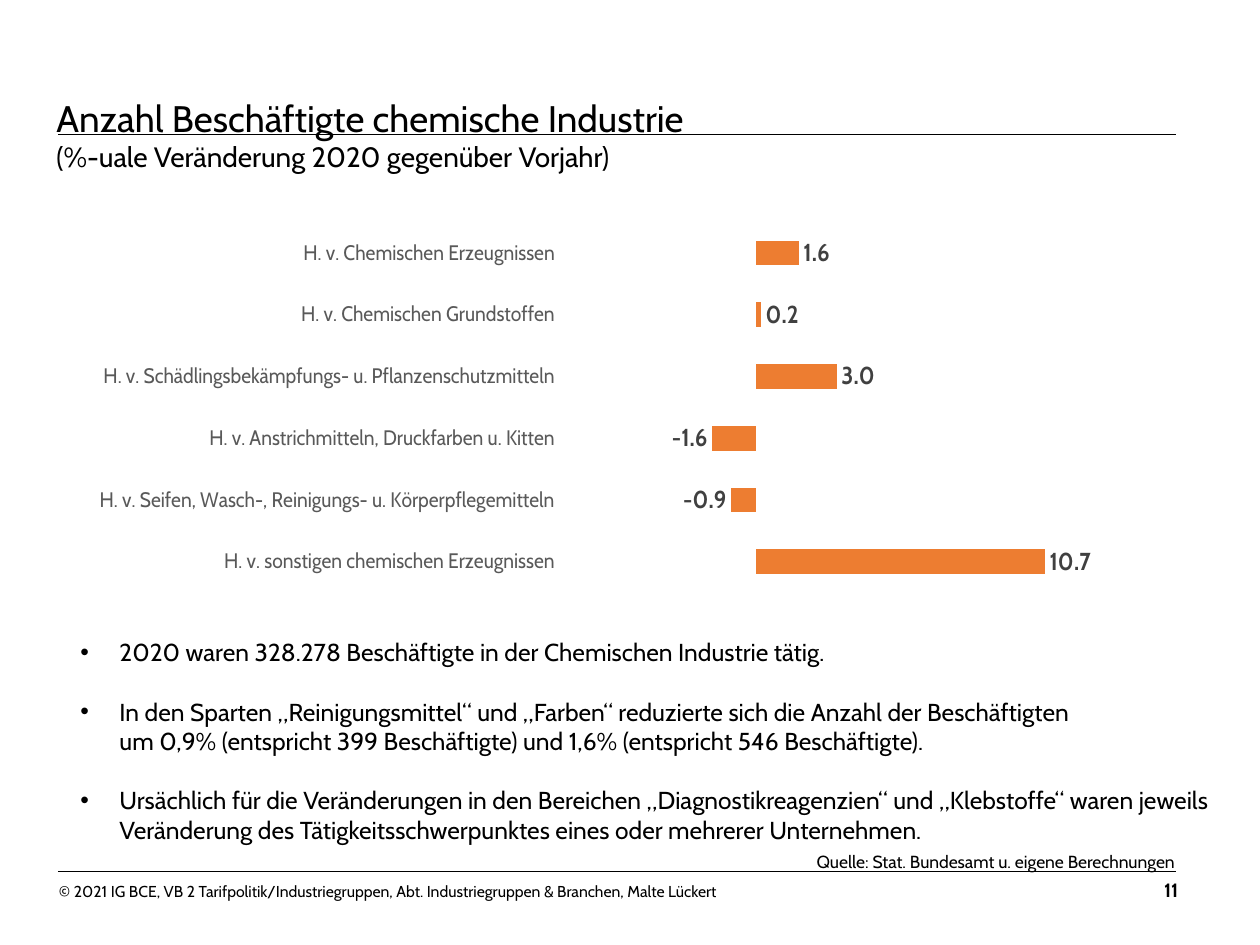
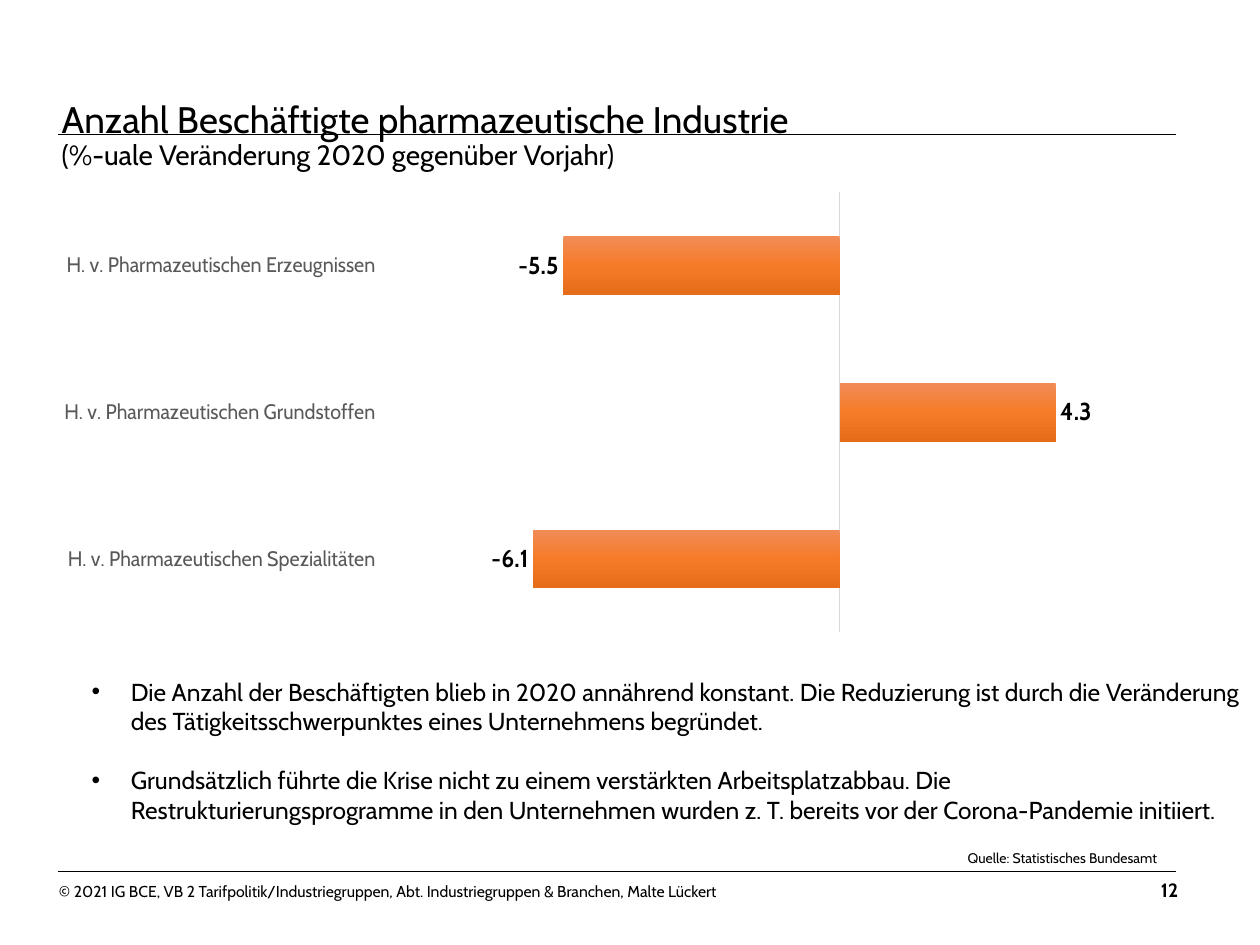
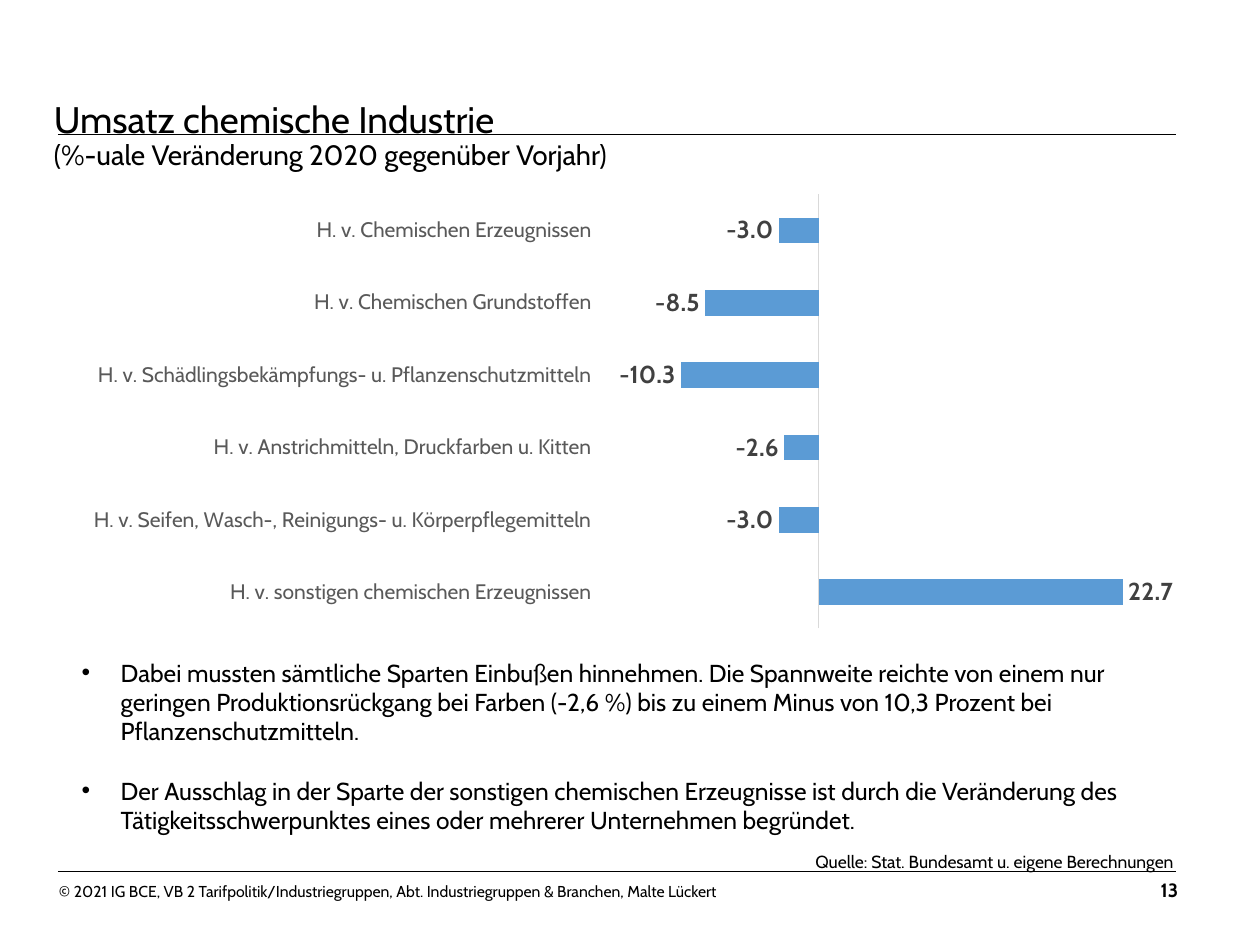
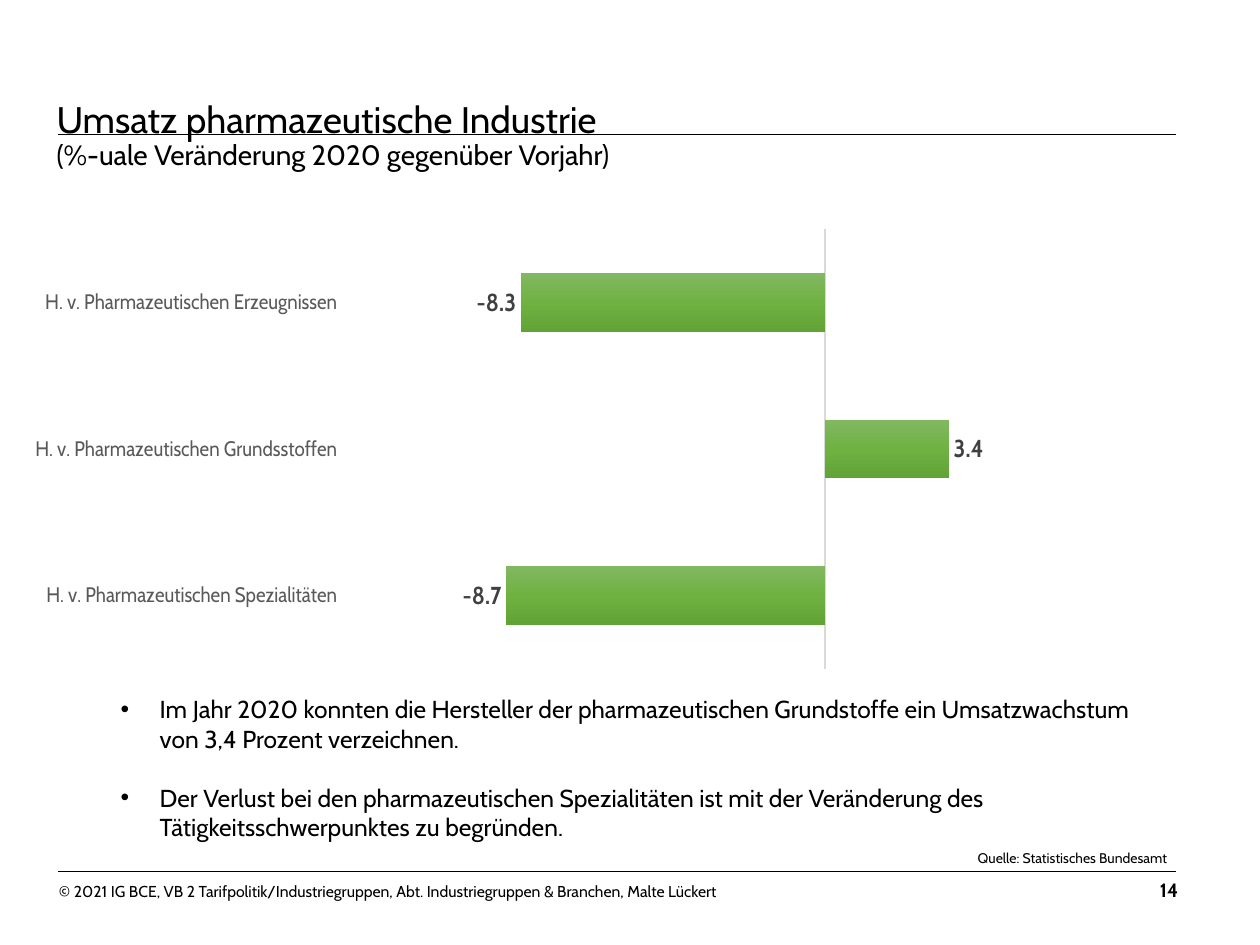
from lxml import etree
from pptx import Presentation
from pptx.chart.data import CategoryChartData
from pptx.dml.color import RGBColor
from pptx.enum.chart import XL_CHART_TYPE, XL_LABEL_POSITION, XL_TICK_LABEL_POSITION, XL_TICK_MARK
from pptx.enum.shapes import MSO_CONNECTOR
from pptx.enum.text import PP_ALIGN
from pptx.oxml.ns import qn
from pptx.util import Inches, Pt

BAR = XL_CHART_TYPE.BAR_CLUSTERED
OUTSIDE_END = XL_LABEL_POSITION.OUTSIDE_END
LOW = XL_TICK_LABEL_POSITION.LOW
NO_TICKS = XL_TICK_MARK.NONE
STRAIGHT = MSO_CONNECTOR.STRAIGHT
LEFT, RIGHT = PP_ALIGN.LEFT, PP_ALIGN.RIGHT

FONT = "Cabin"
COLORS = {
    "text": "000000",
    "category": "595959",
    "value": "404040",
    "axis": "D9D9D9",
    "orange": "ED7D31",
    "blue": "5B9BD5",
}
GRADIENTS = {
    "orange": ("F18C57", "F67B28", "E56C19"),
    "green": ("81B861", "6FB242", "62A336"),
}

FIRST_PAGE = 11
SUBTITLE = "(%-uale Veränderung 2020 gegenüber Vorjahr)"
COPYRIGHT = "© 2021 IG BCE, VB 2 Tarifpolitik/Industriegruppen, Abt. Industriegruppen & Branchen, Malte Lückert"
RULE_LEFT, RULE_RIGHT, RULE_TOPS = 0.46, 9.33, (6.92, 1.07)

CHEMISTRY = (
    "H. v. Chemischen Erzeugnissen",
    "H. v. Chemischen Grundstoffen",
    "H. v. Schädlingsbekämpfungs- u. Pflanzenschutzmitteln",
    "H. v. Anstrichmitteln, Druckfarben u. Kitten",
    "H. v. Seifen, Wasch-, Reinigungs- u. Körperpflegemitteln",
    "H. v. sonstigen chemischen Erzeugnissen",
)
CHEMISTRY_SOURCE = {
    "text": "Quelle: Stat. Bundesamt u. eigene Berechnungen",
    "size": 10, "align": RIGHT, "spacing": 0.8,
}
PHARMA_SOURCE = {"text": "Quelle: Statistisches Bundesamt", "size": 8, "inset": 0}

SLIDES = [
    {
        "title": "Anzahl Beschäftigte chemische Industrie",
        "title_box": (0.35, 0.71, 9.06, 0.73), "title_spacing": 1.0,
        "source": CHEMISTRY_SOURCE, "source_box": (5, 6.74, 4.42, 0.23),
        "chart": {
            "box": (0.79, 1.43, 8.43, 3.67), "plot": (0.387, 0.091, 0.557, 0.801),
            "categories": CHEMISTRY, "values": (1.6, 0.2, 3.0, -1.6, -0.9, 10.7),
            "fill": "orange", "min": -7, "gap": 150,
        },
        "bullets_box": (0.54, 5.01, 9.26, 2.46),
        "bullets": [
            "2020 waren 328.278 Beschäftigte in der Chemischen Industrie tätig.",
            "In den Sparten „Reinigungsmittel“ und „Farben“ reduzierte sich die Anzahl der Beschäftigten\n"
            "um 0,9% (entspricht 399 Beschäftigte) und 1,6% (entspricht 546 Beschäftigte).",
            "Ursächlich für die Veränderungen in den Bereichen „Diagnostikreagenzien“ und „Klebstoffe“ "
            "waren jeweils Veränderung des Tätigkeitsschwerpunktes eines oder mehrerer Unternehmen.",
        ],
    },
    {
        "title": "Anzahl Beschäftigte pharmazeutische Industrie",
        "title_box": (0.39, 0.76, 8.78, 1),
        "source": PHARMA_SOURCE, "source_box": (7.68, 6.74, 2.55, 0.16),
        "chart": {
            "box": (0.51, 1.39, 8.66, 3.7), "plot": (0.251, 0.037, 0.686, 0.944),
            "categories": (
                "H. v. Pharmazeutischen Erzeugnissen",
                "H. v. Pharmazeutischen Grundstoffen",
                "H. v. Pharmazeutischen Spezialitäten",
            ),
            "values": (-5.5, 4.3, -6.1), "gradient": "orange", "label": "text",
            "min": -9, "max": 5, "gap": 150, "axis_width": 1,
        },
        "bullets_box": (0.63, 5.32, 9.37, 1.28),
        "bullets": [
            "Die Anzahl der Beschäftigten blieb in 2020 annährend konstant. Die Reduzierung ist durch die "
            "Veränderung des Tätigkeitsschwerpunktes eines Unternehmens begründet.",
            "Grundsätzlich führte die Krise nicht zu einem verstärkten Arbeitsplatzabbau. Die "
            "Restrukturierungsprogramme in den Unternehmen wurden z. T. bereits vor der Corona-Pandemie "
            "initiiert.",
        ],
    },
    {
        "title": "Umsatz chemische Industrie",
        "title_box": (0.33, 0.76, 8.78, 1),
        "source": CHEMISTRY_SOURCE, "source_box": (4.99, 6.74, 4.42, 0.23),
        "chart": {
            "box": (0.56, 1.47, 9.21, 3.59),
            "categories": CHEMISTRY, "values": (-3.0, -8.5, -10.3, -2.6, -3.0, 22.7),
            "fill": "blue", "min": -16, "gap": 182, "axis_width": 0.75,
        },
        "bullets_box": (0.55, 5.17, 8.66, 1.51),
        "bullets": [
            "Dabei mussten sämtliche Sparten Einbußen hinnehmen. Die Spannweite reichte von einem nur "
            "geringen Produktionsrückgang bei Farben (-2,6 %) bis zu einem Minus von 10,3 Prozent bei "
            "Pflanzenschutzmitteln.",
            "Der Ausschlag in der Sparte der sonstigen chemischen Erzeugnisse ist durch die Veränderung des "
            "Tätigkeitsschwerpunktes eines oder mehrerer Unternehmen begründet.",
        ],
    },
    {
        "title": "Umsatz pharmazeutische Industrie",
        "title_box": (0.35, 0.76, 8.78, 1),
        "source": PHARMA_SOURCE, "source_box": (7.76, 6.74, 1.74, 0.18),
        "chart": {
            "box": (0.28, 1.28, 8.66, 4.17), "plot": (0.197, 0.13, 0.643, 0.836),
            "categories": (
                "H. v. Pharmazeutischen Erzeugnissen",
                "H. v. Pharmazeutischen Grundsstoffen",
                "H. v. Pharmazeutischen Spezialitäten",
            ),
            "values": (-8.3, 3.4, -8.7), "gradient": "green",
            "min": -13, "max": 4, "gap": 150, "axis_width": 1,
        },
        "bullets_box": (0.86, 5.46, 8.27, 1.28),
        "bullets": [
            "Im Jahr 2020 konnten die Hersteller der pharmazeutischen Grundstoffe ein Umsatzwachstum "
            "von 3,4 Prozent verzeichnen.",
            "Der Verlust bei den pharmazeutischen Spezialitäten ist mit der Veränderung des "
            "Tätigkeitsschwerpunktes zu begründen.",
        ],
    },
]


def rgb(name):
    return RGBColor.from_string(COLORS[name])


def style(font, size, color="text", bold=False):
    font.name, font.size, font.bold = FONT, Pt(size), bold
    font.color.rgb = rgb(color)


def add_frame(slide, box, inset=None):
    frame = slide.shapes.add_textbox(*map(Inches, box)).text_frame
    frame.word_wrap = True
    if inset is not None:
        frame.margin_left = frame.margin_right = Inches(inset)
        frame.margin_top = frame.margin_bottom = Inches(inset)
    return frame


def add_line_of_text(slide, box, text, size, align=LEFT, bold=False, spacing=None, inset=None):
    paragraph = add_frame(slide, box, inset).paragraphs[0]
    paragraph.text = text
    paragraph.alignment = align
    paragraph.line_spacing = spacing
    style(paragraph.font, size, bold=bold)


def add_rules_and_footer(slide, page):
    for top in RULE_TOPS:
        rule = slide.shapes.add_connector(
            STRAIGHT, *map(Inches, (RULE_LEFT, top, RULE_RIGHT, top)))
        rule.line.color.rgb = rgb("text")
        rule.line.width = Pt(0.5)
        etree.SubElement(rule._element.spPr, qn("a:effectLst"))
    add_line_of_text(slide, (4.71, 6.92, 4.74, 0.29), str(page), 11, RIGHT, bold=True)
    add_line_of_text(slide, (0.37, 6.95, 6.67, 0.25), COPYRIGHT, 9)


def add_title(slide, title, box, spacing):
    paragraph = add_frame(slide, box).paragraphs[0]
    paragraph.line_spacing = spacing
    heading = paragraph.add_run()
    heading.text = title
    paragraph.add_line_break()
    subtitle = paragraph.add_run()
    subtitle.text = SUBTITLE
    style(heading.font, 21.1)
    style(subtitle.font, 16)


def add_bullets(slide, box, bullets):
    frame = add_frame(slide, box)
    for i, text in enumerate(bullets):
        paragraph = frame.add_paragraph() if i else frame.paragraphs[0]
        paragraph.text = text.replace("\n", "\v")
        if i:
            paragraph.space_before = Pt(17)
        props = paragraph._p.get_or_add_pPr()
        props.set("marL", str(Inches(0.31)))
        props.set("indent", str(-Inches(0.31)))
        etree.SubElement(props, qn("a:buFont"), typeface="Arial")
        etree.SubElement(props, qn("a:buChar"), char="•")
        style(paragraph.font, 14)


def set_plot_layout(chart, fractions):
    """Place the inner plot area at x, y, w, h as fractions of the chart."""
    plot_area = chart._chartSpace.find(".//" + qn("c:plotArea"))
    layout = plot_area.find(qn("c:layout"))
    if layout is None:
        layout = etree.Element(qn("c:layout"))
        plot_area.insert(0, layout)
    manual = etree.SubElement(layout, qn("c:manualLayout"))
    settings = [("layoutTarget", "inner"), ("xMode", "edge"), ("yMode", "edge")]
    for tag, value in settings + list(zip("xywh", fractions)):
        etree.SubElement(manual, qn("c:" + tag), val=str(value))


def fill_gradient(bars, stops):
    """Spread the stops evenly from the top of each bar to its bottom."""
    bars.format.fill.gradient()
    bars.format.fill.gradient_angle = 270
    stop_list = bars._element.find(".//" + qn("a:gsLst"))
    for old_stop in list(stop_list):
        stop_list.remove(old_stop)
    for i, color in enumerate(stops):
        stop = etree.SubElement(stop_list, qn("a:gs"), pos=str(100000 * i // (len(stops) - 1)))
        etree.SubElement(stop, qn("a:srgbClr"), val=color)


def add_bar_chart(slide, content):
    data = CategoryChartData(number_format="0.0")
    data.categories = content["categories"]
    data.add_series("Series 1", content["values"])
    chart = slide.shapes.add_chart(BAR, *map(Inches, content["box"]), data).chart
    chart.has_legend = chart.has_title = False
    style(chart.font, 10)
    if "plot" in content:
        set_plot_layout(chart, content["plot"])

    branches = chart.category_axis
    branches.reverse_order = True
    branches.tick_label_position = LOW
    branches.major_tick_mark = branches.minor_tick_mark = NO_TICKS
    style(branches.tick_labels.font, 12, "category")
    if "axis_width" in content:
        branches.format.line.color.rgb = rgb("axis")
        branches.format.line.width = Pt(content["axis_width"])
    else:
        branches.format.line.fill.background()

    change = chart.value_axis
    change.visible = change.has_major_gridlines = False
    change.minimum_scale = content["min"]
    change.maximum_scale = content.get("max")

    plot = chart.plots[0]
    plot.gap_width = content["gap"]
    plot.vary_by_categories = False
    plot.has_data_labels = True
    labels = plot.data_labels
    labels.show_value = True
    labels.number_format, labels.number_format_is_linked = "0.0", False
    labels.position = OUTSIDE_END
    style(labels.font, 14, content.get("label", "value"), bold=True)

    bars = plot.series[0]
    bars.invert_if_negative = False
    if "gradient" in content:
        fill_gradient(bars, GRADIENTS[content["gradient"]])
    else:
        bars.format.fill.solid()
        bars.format.fill.fore_color.rgb = rgb(content["fill"])


def main():
    deck = Presentation()
    deck.slide_width, deck.slide_height = Inches(10), Inches(7.5)
    blank = deck.slide_layouts[6]
    for page, content in enumerate(SLIDES, FIRST_PAGE):
        slide = deck.slides.add_slide(blank)
        add_rules_and_footer(slide, page)
        add_title(slide, content["title"], content["title_box"], content.get("title_spacing", 0.9))
        add_line_of_text(slide, content["source_box"], **content["source"])
        add_bar_chart(slide, content["chart"])
        add_bullets(slide, content["bullets_box"], content["bullets"])
    deck.save("out.pptx")


if __name__ == "__main__":
    main()
